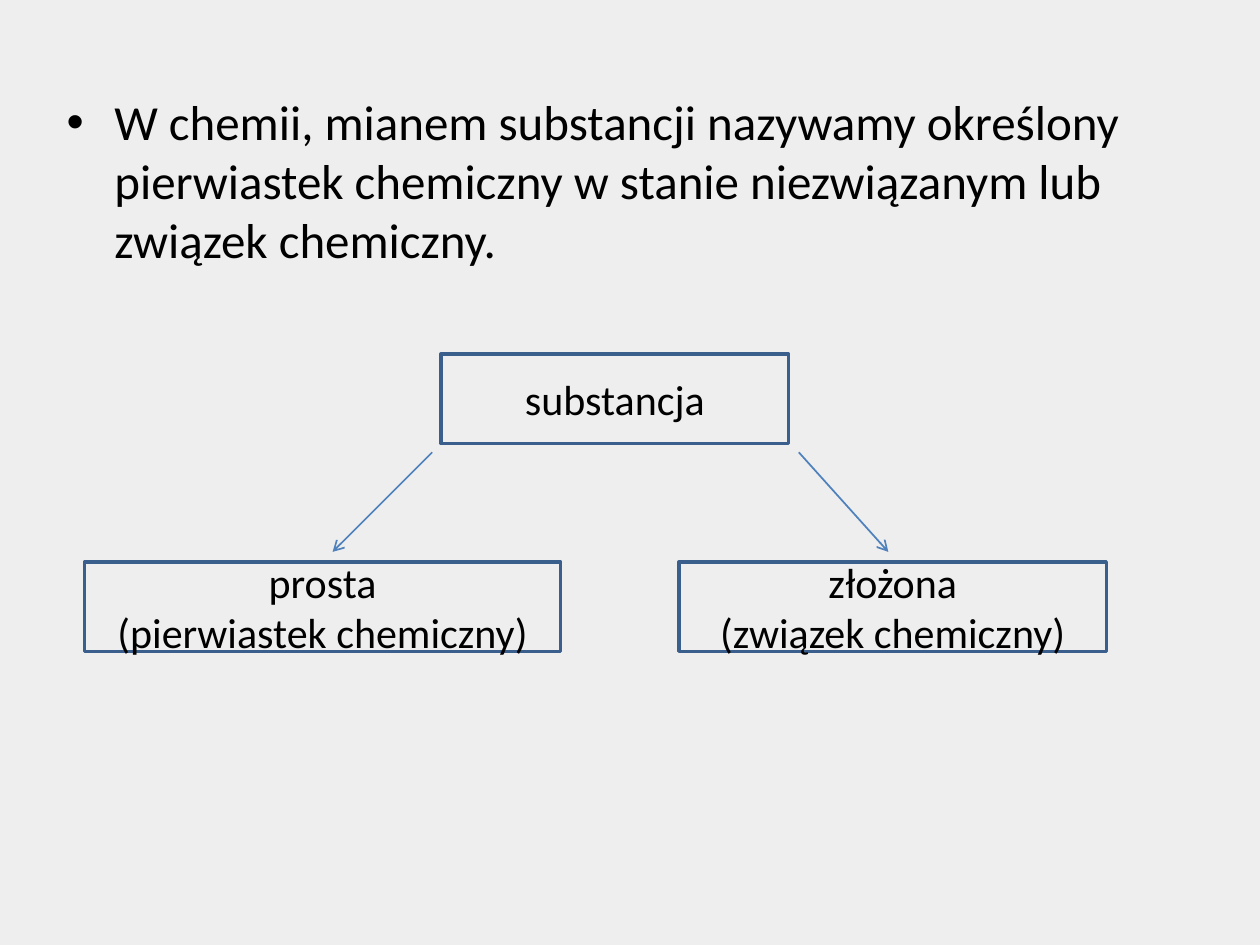
"""Build a slide that defines a chemical substance and splits it into two kinds."""
from lxml.etree import SubElement
from pptx import Presentation
from pptx.dml.color import RGBColor
from pptx.enum.shapes import MSO_CONNECTOR as Connector, MSO_SHAPE as Shape
from pptx.enum.text import MSO_ANCHOR as Anchor, PP_ALIGN as Align
from pptx.oxml.ns import qn
from pptx.util import Inches, Pt

COLORS = {"background": "EEEEEE", "text": "000000", "border": "3A5F8C", "arrow": "4F81BD"}


def color(part):
    return RGBColor.from_string(COLORS[part])


def style(paragraph, size):
    for attribute, value in {"name": "Calibri", "size": Pt(size)}.items():
        setattr(paragraph.font, attribute, value)
    paragraph.font.color.rgb = color("text")


prs = Presentation()
prs.slide_width, prs.slide_height = Inches(10), Inches(7.5)
slide = prs.slides.add_slide(prs.slide_layouts[6])
slide.background.fill.solid()
slide.background.fill.fore_color.rgb = color("background")

definition = slide.shapes.add_textbox(Inches(0.43), Inches(0.68), Inches(9), Inches(4.95))
definition.text_frame.word_wrap = True
sentence = definition.text_frame.paragraphs[0]
sentence.text = (
    "W chemii, mianem substancji nazywamy określony pierwiastek chemiczny "
    "w stanie niezwiązanym lub związek chemiczny."
)
properties = sentence._p.get_or_add_pPr()
properties.set("marL", str(Inches(0.38)))
properties.set("indent", str(Inches(-0.38)))
SubElement(properties, qn("a:buFont"), typeface="Arial")
SubElement(properties, qn("a:buChar"), char="•")
style(sentence, 28)

concepts = [
    (0.67, 4.46, 3.78, ["prosta", "(pierwiastek chemiczny)"]),
    (3.5, 2.81, 2.76, ["substancja"]),
    (5.39, 4.46, 3.39, ["złożona", "(związek chemiczny)"]),
]
for left, top, width, lines in concepts:
    concept = slide.shapes.add_shape(
        Shape.RECTANGLE, Inches(left), Inches(top), Inches(width), Inches(0.71)
    )
    concept.shadow.inherit = False
    concept.fill.background()
    concept.line.color.rgb = color("border")
    concept.line.width = Pt(2)
    label = concept.text_frame
    label.text = "\n".join(lines)
    for attribute, value in {"word_wrap": True, "vertical_anchor": Anchor.MIDDLE}.items():
        setattr(label, attribute, value)
    for paragraph in label.paragraphs:
        paragraph.alignment = Align.CENTER
        style(paragraph, 24)

for start, end in [(6.34, 7.05), (3.43, 2.64)]:
    branch = slide.shapes.add_connector(
        Connector.STRAIGHT, Inches(start), Inches(3.59), Inches(end), Inches(4.38)
    )
    branch.line.color.rgb = color("arrow")
    branch.line.width = Pt(1)
    SubElement(branch.line._get_or_add_ln(), qn("a:tailEnd"), type="arrow")
    SubElement(branch._element.spPr, qn("a:effectLst"))

prs.save("out.pptx")
